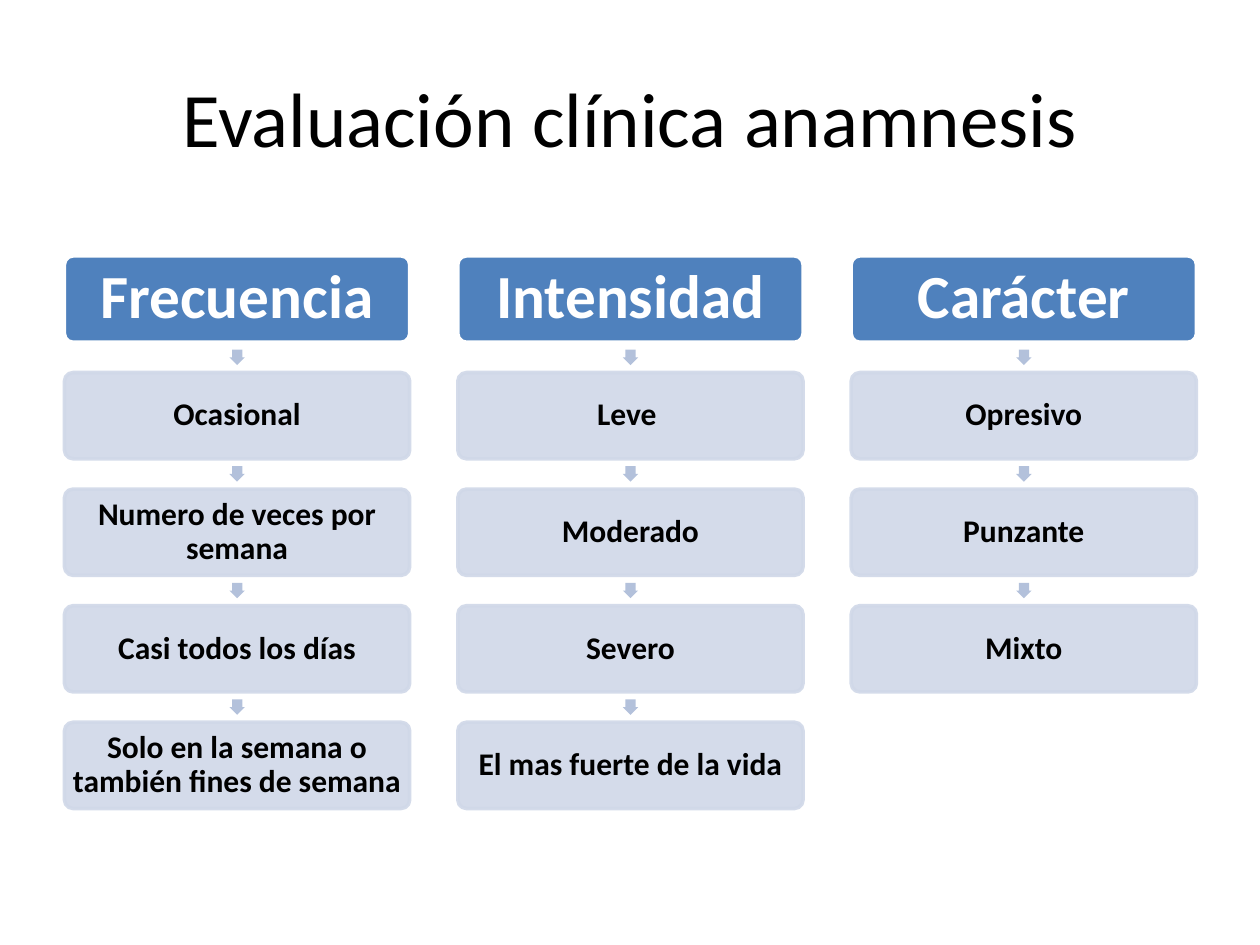
"""Build a slide with three headed columns of clinical assessment steps."""
from dataclasses import dataclass

from lxml.etree import SubElement
from pptx import Presentation
from pptx.dml.color import RGBColor
from pptx.enum.shapes import MSO_SHAPE
from pptx.enum.text import MSO_ANCHOR, PP_ALIGN
from pptx.oxml.ns import qn
from pptx.shapes.autoshape import Shape
from pptx.slide import Slide
from pptx.util import Cm, Pt

BLACK = RGBColor(0x00, 0x00, 0x00)
WHITE = RGBColor(0xFF, 0xFF, 0xFF)
HEADING_BLUE = RGBColor(0x4F, 0x81, 0xBD)
STEP_BLUE = RGBColor(0xD0, 0xD8, 0xE8)
ARROW_BLUE = RGBColor(0xB3, 0xC1, 0xDB)

LEFT, TOP = 1.3, 5.16
BOX_WIDTH, BOX_HEIGHT = 6.96, 1.74
COLUMN_PITCH, ROW_PITCH = 7.93, 2.35
ARROW_SIZE = 0.31


@dataclass(frozen=True)
class Column:
    heading: str
    steps: tuple[str, ...]


@dataclass(frozen=True)
class BoxStyle:
    fill: RGBColor
    line: RGBColor
    text: RGBColor
    size: float
    inset: float
    opacity: int = 100


HEADING = BoxStyle(HEADING_BLUE, WHITE, WHITE, 35, 0.12)
STEP = BoxStyle(STEP_BLUE, STEP_BLUE, BLACK, 18, 0.08, 90)

COLUMNS = (
    Column("Frecuencia", (
        "Ocasional",
        "Numero de veces por semana",
        "Casi todos los días",
        "Solo en la semana o también fines de semana",
    )),
    Column("Intensidad", ("Leve ", "Moderado", "Severo", "El mas fuerte de la vida")),
    Column("Carácter", ("Opresivo", "Punzante", "Mixto")),
)


def write_text(shape: Shape, text: str, *, size: float, color: RGBColor,
               bold: bool = False, inset: float | None = None,
               line_spacing: float = 1.0) -> None:
    """Write one centred paragraph into a shape."""
    frame = shape.text_frame
    frame.word_wrap = True
    frame.vertical_anchor = MSO_ANCHOR.MIDDLE
    if inset is not None:
        frame.margin_left = frame.margin_right = Cm(inset)
        frame.margin_top = frame.margin_bottom = Cm(inset)
    paragraph = frame.paragraphs[0]
    paragraph.alignment = PP_ALIGN.CENTER
    paragraph.line_spacing = line_spacing
    run = paragraph.add_run()
    run.text = text
    run.font.name = "Calibri"
    run.font.size = Pt(size)
    run.font.bold = bold
    run.font.color.rgb = color


def set_opacity(shape: Shape, percent: int) -> None:
    """Apply an opacity to the fill and the line of a shape."""
    for color in shape._element.spPr.iter(qn("a:srgbClr")):
        SubElement(color, qn("a:alpha"), val=str(percent * 1000))


def draw_box(slide: Slide, left: float, top: float, text: str, style: BoxStyle) -> None:
    """Draw a rounded box with its text."""
    box = slide.shapes.add_shape(MSO_SHAPE.ROUNDED_RECTANGLE, Cm(left), Cm(top),
                                 Cm(BOX_WIDTH), Cm(BOX_HEIGHT))
    box.adjustments[0] = 0.1
    box.shadow.inherit = False
    box.fill.solid()
    box.fill.fore_color.rgb = style.fill
    box.line.color.rgb = style.line
    box.line.width = Pt(2)
    if style.opacity < 100:
        set_opacity(box, style.opacity)
    write_text(box, text, size=style.size, color=style.text, bold=True,
               inset=style.inset, line_spacing=0.9)


def draw_arrow(slide: Slide, box_left: float, box_top: float) -> None:
    """Draw a down arrow in the gap above a box."""
    gap = ROW_PITCH - BOX_HEIGHT
    left = box_left + (BOX_WIDTH - ARROW_SIZE) / 2
    top = box_top - (gap + ARROW_SIZE) / 2
    arrow = slide.shapes.add_shape(MSO_SHAPE.RIGHT_ARROW, Cm(left), Cm(top),
                                   Cm(ARROW_SIZE), Cm(ARROW_SIZE))
    arrow.rotation = 90
    arrow.adjustments[0] = 0.67
    arrow.adjustments[1] = 0.5
    arrow.shadow.inherit = False
    arrow.fill.solid()
    arrow.fill.fore_color.rgb = ARROW_BLUE
    arrow.line.fill.background()


def draw_column(slide: Slide, left: float, column: Column) -> None:
    """Draw a heading and the steps that follow it."""
    draw_box(slide, left, TOP, column.heading, HEADING)
    for row, step in enumerate(column.steps, start=1):
        top = TOP + row * ROW_PITCH
        draw_arrow(slide, left, top)
        draw_box(slide, left, top, step, STEP)


def main() -> None:
    """Build and save the presentation."""
    presentation = Presentation()
    presentation.slide_width, presentation.slide_height = Cm(25.4), Cm(19.05)
    slide = presentation.slides.add_slide(presentation.slide_layouts[5])
    title = slide.shapes.title
    title.left, title.top = Cm(1.27), Cm(0.76)
    title.width, title.height = Cm(22.86), Cm(3.18)
    write_text(title, "Evaluación clínica anamnesis", size=44, color=BLACK)
    for index, column in enumerate(COLUMNS):
        draw_column(slide, LEFT + index * COLUMN_PITCH, column)
    presentation.save("out.pptx")


if __name__ == "__main__":
    main()
